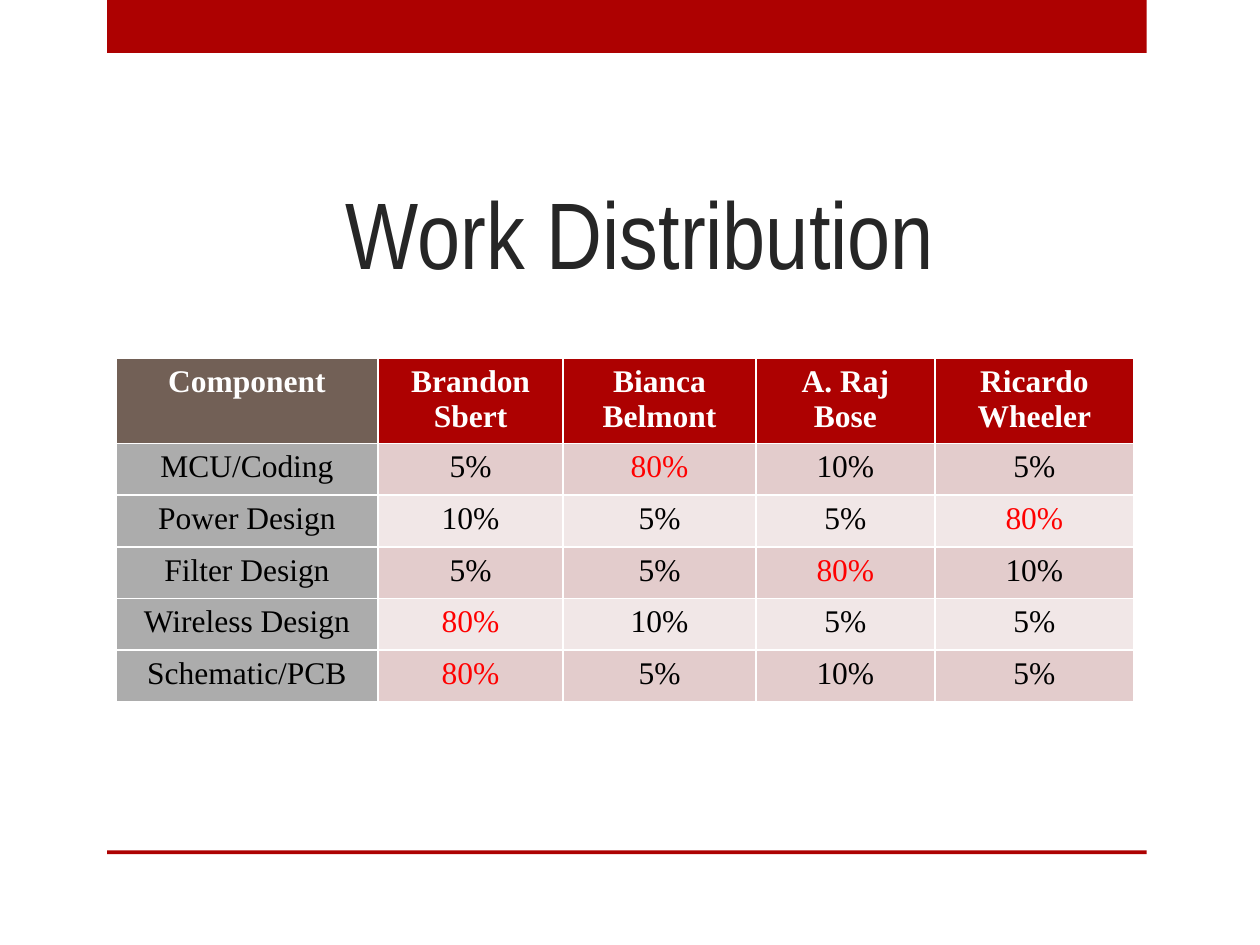
"""Build the Work Distribution slide with its table of shares per person."""
from pptx import Presentation
from pptx.dml.color import RGBColor
from pptx.enum.shapes import MSO_SHAPE as Shape
from pptx.enum.text import MSO_ANCHOR as Anchor, MSO_AUTO_SIZE as AutoSize, PP_ALIGN as Align
from pptx.util import Inches, Pt

TITLE = "Work Distribution"
ROWS = [
    ("Component", "Brandon Sbert", "Bianca Belmont", "A. Raj Bose", "Ricardo Wheeler"),
    ("MCU/Coding", "5%", "80%", "10%", "5%"),
    ("Power Design", "10%", "5%", "5%", "80%"),
    ("Filter Design", "5%", "5%", "80%", "10%"),
    ("Wireless Design", "80%", "10%", "5%", "5%"),
    ("Schematic/PCB", "80%", "5%", "10%", "5%"),
]
LEAD_SHARE = "80%"
COLUMN_WIDTHS = (2.08, 1.47, 1.53, 1.42, 1.58)
HEADER_HEIGHT, ROW_HEIGHT = 0.68, 0.41
BARS = [(0, 0.42), (6.75, 0.03)]

RED = RGBColor(0xAD, 0x01, 0x01)
BROWN = RGBColor(0x72, 0x60, 0x56)
GREY = RGBColor(0xAC, 0xAC, 0xAC)
ROSE = RGBColor(0xE3, 0xCC, 0xCC)
PALE_ROSE = RGBColor(0xF1, 0xE7, 0xE7)
CHARCOAL = RGBColor(0x26, 0x26, 0x26)
BRIGHT_RED = RGBColor(0xFF, 0x00, 0x00)
BLACK = RGBColor(0x00, 0x00, 0x00)
WHITE = RGBColor(0xFF, 0xFF, 0xFF)


def write(frame, text, font, size, color, bold=False):
    para = frame.paragraphs[0]
    para.alignment = Align.CENTER
    span = para.add_run()
    span.text = text
    span.font.name = font
    span.font.size = Pt(size)
    span.font.bold = bold
    span.font.color.rgb = color


def cell_fill(row, column):
    if row == 0:
        return RED if column else BROWN
    if column == 0:
        return GREY
    return ROSE if row % 2 else PALE_ROSE


def text_color(row, text):
    if row == 0:
        return WHITE
    return BRIGHT_RED if text == LEAD_SHARE else BLACK


def add_bars(page):
    for top, height in BARS:
        bar = page.shapes.add_shape(
            Shape.RECTANGLE, Inches(0.85), Inches(top), Inches(8.25), Inches(height))
        bar.shadow.inherit = False
        bar.fill.solid()
        bar.fill.fore_color.rgb = RED
        bar.line.fill.background()


def add_title(page):
    title = page.shapes.title
    title.left, title.top = Inches(1.08), Inches(1.08)
    title.width, title.height = Inches(8), Inches(1.26)
    frame = title.text_frame
    frame.auto_size = AutoSize.NONE
    frame.vertical_anchor = Anchor.BOTTOM
    write(frame, TITLE, "Arial Narrow", 54, CHARCOAL)


def add_shares(page):
    heights = [HEADER_HEIGHT] + [ROW_HEIGHT] * (len(ROWS) - 1)
    table = page.shapes.add_table(
        len(ROWS), len(COLUMN_WIDTHS), Inches(0.92), Inches(2.84),
        Inches(sum(COLUMN_WIDTHS)), Inches(sum(heights))).table
    for column, width in zip(table.columns, COLUMN_WIDTHS):
        column.width = Inches(width)
    for row, height in zip(table.rows, heights):
        row.height = Inches(height)
    for r, texts in enumerate(ROWS):
        for c, text in enumerate(texts):
            cell = table.cell(r, c)
            cell.fill.solid()
            cell.fill.fore_color.rgb = cell_fill(r, c)
            write(cell.text_frame, text, "Times New Roman", 18, text_color(r, text), r == 0)


def main():
    deck = Presentation()
    deck.slide_width, deck.slide_height = Inches(10), Inches(7.5)
    page = deck.slides.add_slide(deck.slide_layouts[5])
    add_bars(page)
    add_title(page)
    add_shares(page)
    deck.save("out.pptx")


if __name__ == "__main__":
    main()
